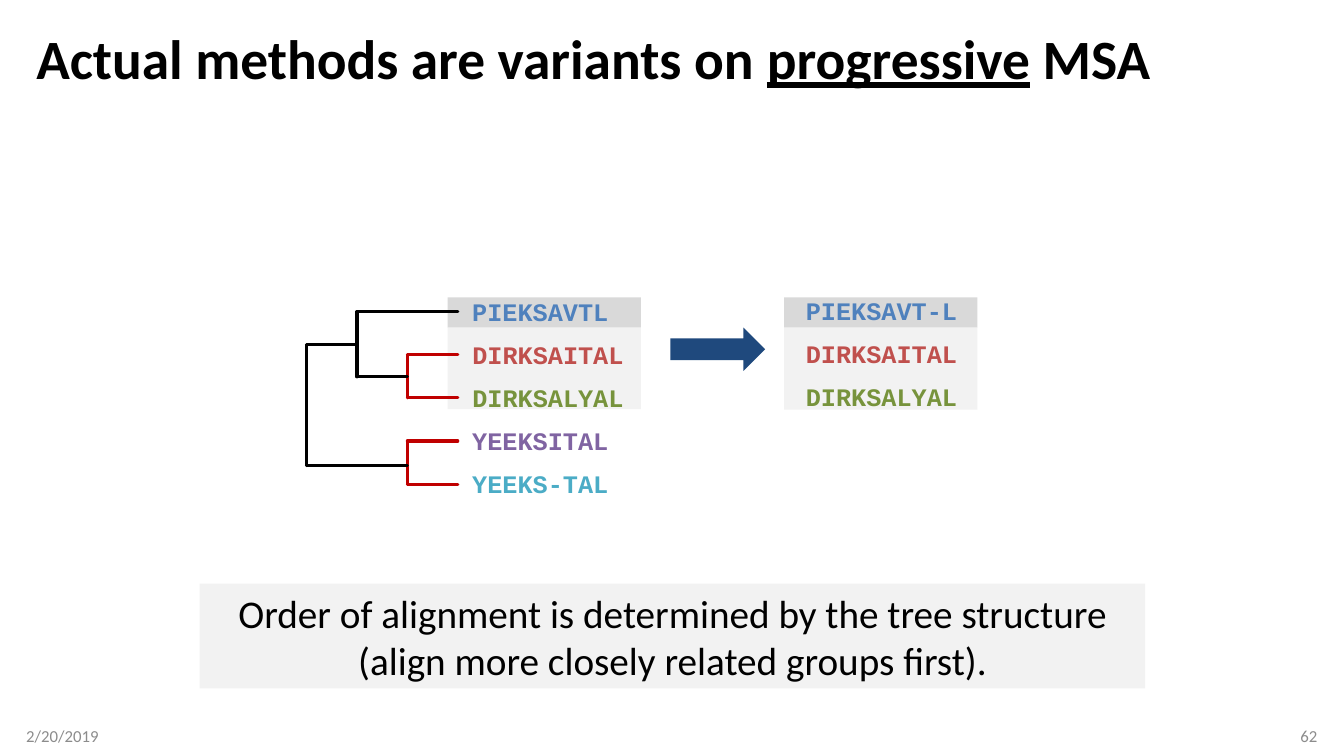
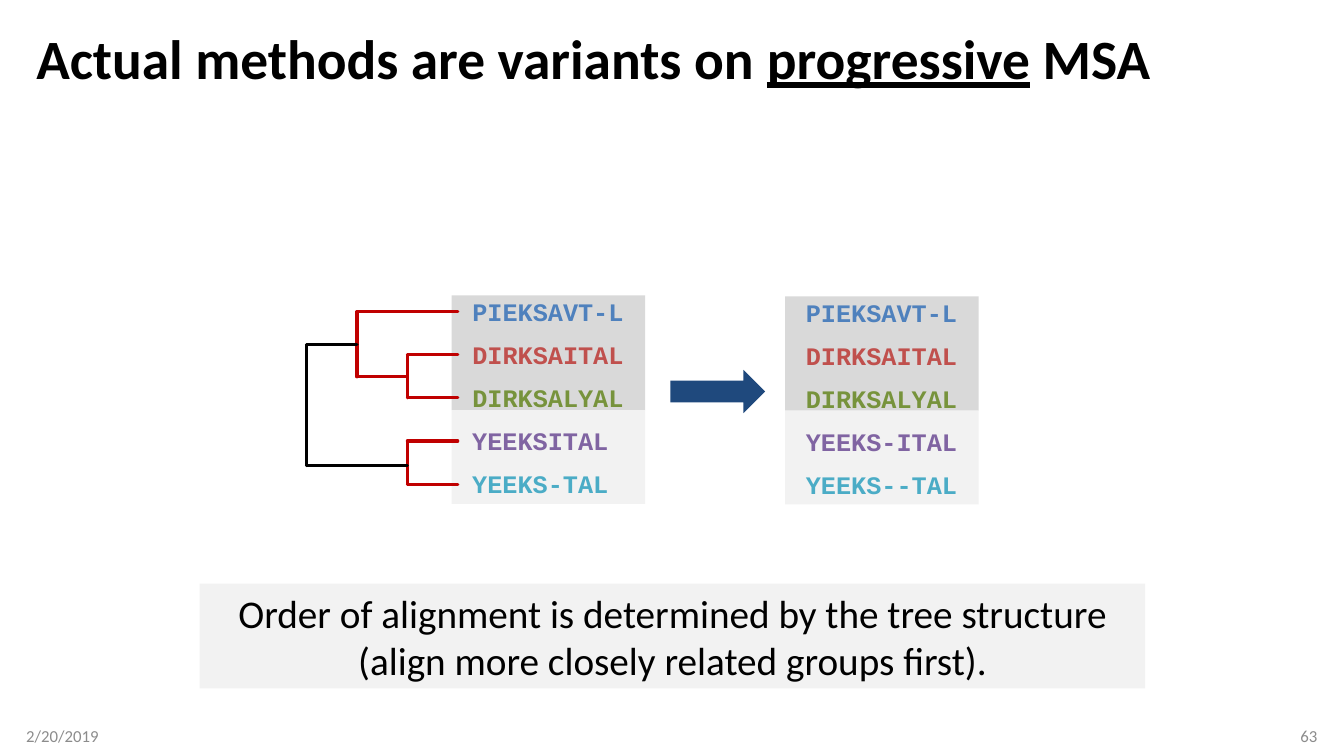
from lxml import etree
from pptx import Presentation
from pptx.dml.color import RGBColor
from pptx.enum.shapes import MSO_CONNECTOR, MSO_SHAPE
from pptx.enum.text import MSO_ANCHOR, MSO_AUTO_SIZE, PP_ALIGN
from pptx.oxml.ns import qn
from pptx.util import Pt

RECT, RIGHT_ARROW = MSO_SHAPE.RECTANGLE, MSO_SHAPE.RIGHT_ARROW
STRAIGHT = MSO_CONNECTOR.STRAIGHT
MIDDLE, TOP = MSO_ANCHOR.MIDDLE, MSO_ANCHOR.TOP
LEFT, CENTER, RIGHT = PP_ALIGN.LEFT, PP_ALIGN.CENTER, PP_ALIGN.RIGHT
NO_FIT = MSO_AUTO_SIZE.NONE

COLORS = {
    "black": "000000", "footer": "8C8C8C", "arrow": "1F497D",
    "dark_band": "D9D9D9", "light_band": "F2F2F2", "joined": "C00000",
}
SEQUENCE_COLORS = ["4F81BD", "C0504D", "77933C", "8064A2", "4BACC6"]
BODY, MONO = "Calibri", "Courier New"

ROW_PITCH = 30.8
CHAR_WIDTH = 10.87
BAND_WIDTH = 138.2
LEAF_YS = [222.6 + i * ROW_PITCH for i in range(5)]
ROOT_X, UPPER_X, PAIR_X, LEAF_X = (219 + i * 36 for i in range(4))
UPPER_Y, PAIR_Y, LOWER_Y = 246.2, 269.2, 332.6


def rgb(name):
    return RGBColor.from_string(COLORS.get(name, name))


def style(p, font, size, color, align, bold=False):
    p.alignment = align
    p.font.name, p.font.size, p.font.bold = font, Pt(size), bold
    p.font.color.rgb = rgb(color)


def add_box(s, kind, x, y, w, h, fill):
    sp = s.shapes.add_shape(kind, Pt(x), Pt(y), Pt(w), Pt(h))
    sp.shadow.inherit = False
    sp.fill.solid()
    sp.fill.fore_color.rgb = rgb(fill)
    sp.line.fill.background()
    return sp


def add_text(s, x, y, w, h, text, anchor, insets=(0, 0), wrap=True):
    sp = s.shapes.add_textbox(Pt(x), Pt(y), Pt(w), Pt(h))
    tf = sp.text_frame
    tf.margin_left, tf.margin_right = map(Pt, insets)
    tf.margin_top = tf.margin_bottom = 0
    tf.word_wrap, tf.vertical_anchor = wrap, anchor
    p = tf.paragraphs[0]
    p.text = text
    return p


def add_line(s, x1, y1, x2, y2, color):
    line = s.shapes.add_connector(STRAIGHT, Pt(x1), Pt(y1), Pt(x2), Pt(y2))
    line.line.color.rgb = rgb(color)
    line.line.width = Pt(2.25)
    props = line._element.spPr
    props.find(qn("a:ln")).set("cap", "rnd")
    etree.SubElement(props, qn("a:effectLst"))


def add_fork(s, x, upper, lower, color):
    """Join two branches, each given as its right end (x, y), at x."""
    for end_x, y in (upper, lower):
        add_line(s, x, y, end_x, y, color)
    add_line(s, x, upper[1], x, lower[1], color)


def add_tree(s, upper_color):
    leaves = [(LEAF_X, y) for y in LEAF_YS]
    add_fork(s, PAIR_X, leaves[1], leaves[2], "joined")
    add_fork(s, PAIR_X, leaves[3], leaves[4], "joined")
    add_fork(s, UPPER_X, leaves[0], (PAIR_X, PAIR_Y), upper_color)
    add_fork(s, ROOT_X, (UPPER_X, UPPER_Y), (PAIR_X, LOWER_Y), "black")


def add_bands(s, x, top, split, bottom):
    """Shade the two groups being aligned, which meet at split."""
    add_box(s, RECT, x, top, BAND_WIDTH, split - top, "dark_band")
    add_box(s, RECT, x, split, BAND_WIDTH, bottom - split, "light_band")


def add_sequences(s, x, top, sequences):
    for i, (text, color) in enumerate(zip(sequences, SEQUENCE_COLORS)):
        p = add_text(s, x, top + i * ROW_PITCH, CHAR_WIDTH * len(text), 21.6,
                     text, TOP, wrap=False)
        style(p, MONO, 18, color, CENTER, bold=True)


def add_title(s):
    title = s.shapes.title
    title.left, title.top, title.width, title.height = map(
        Pt, (18.7, 18, 922.3, 51.8))
    tf = title.text_frame
    tf.auto_size, tf.vertical_anchor = NO_FIT, MIDDLE
    p = tf.paragraphs[0]
    for text in ("Actual methods are variants on ", "progressive", " MSA"):
        r = p.add_run()
        r.text = text
        r.font.underline = text == "progressive"
    p.line_spacing = 0.9
    style(p, BODY, 39.6, "black", LEFT, bold=True)


def add_footer(s, number):
    for x, text, align, insets in ((18.7, "2/20/2019", LEFT, (0, 7.2)),
                                   (725, str(number), RIGHT, (7.2, 0))):
        p = add_text(s, x, 511.2, 216, 28.8, text, MIDDLE, insets)
        style(p, BODY, 12, "footer", align)


def add_caption(s):
    tf = add_box(s, RECT, 142.6, 416.9, 675.4, 74.9, "light_band").text_frame
    tf.word_wrap, tf.vertical_anchor = True, MIDDLE
    tf.text = ("Order of alignment is determined by the tree structure\n"
               "(align more closely related groups first).")
    for p in tf.paragraphs:
        style(p, BODY, 28, "black", CENTER)


def add_step(prs, number, before, after, bands, after_top, arrow_y,
             upper_color):
    """Add one alignment step; bands lists both shaded blocks."""
    s = prs.slides.add_slide(prs.slide_layouts[5])
    add_title(s)
    add_footer(s, number)
    for band in bands:
        add_bands(s, *band)
    add_box(s, RIGHT_ARROW, 478.8, arrow_y, 67.7, 31, "arrow")
    add_sequences(s, 337, 211.4, before)
    add_tree(s, upper_color)
    add_caption(s)
    add_sequences(s, 575.3, after_top, after)


def main():
    prs = Presentation()
    prs.slide_width, prs.slide_height = Pt(960), Pt(540)
    trio = ["PIEKSAVT-L", "DIRKSAITAL", "DIRKSALYAL"]
    pair = ["YEEKSITAL", "YEEKS-TAL"]
    add_step(prs, 62, ["PIEKSAVTL"] + trio[1:] + pair, trio,
             [(319.7, 212.4, 234, 292.3), (560, 212.4, 234, 292.7)],
             210.9, 234, "black")
    add_step(prs, 63, trio + pair, trio + ["YEEKS-ITAL", "YEEKS--TAL"],
             [(322.6, 211, 293, 360), (560.9, 211.7, 293.4, 360.4)],
             212.2, 264.2, "joined")
    prs.save("out.pptx")


if __name__ == "__main__":
    main()
